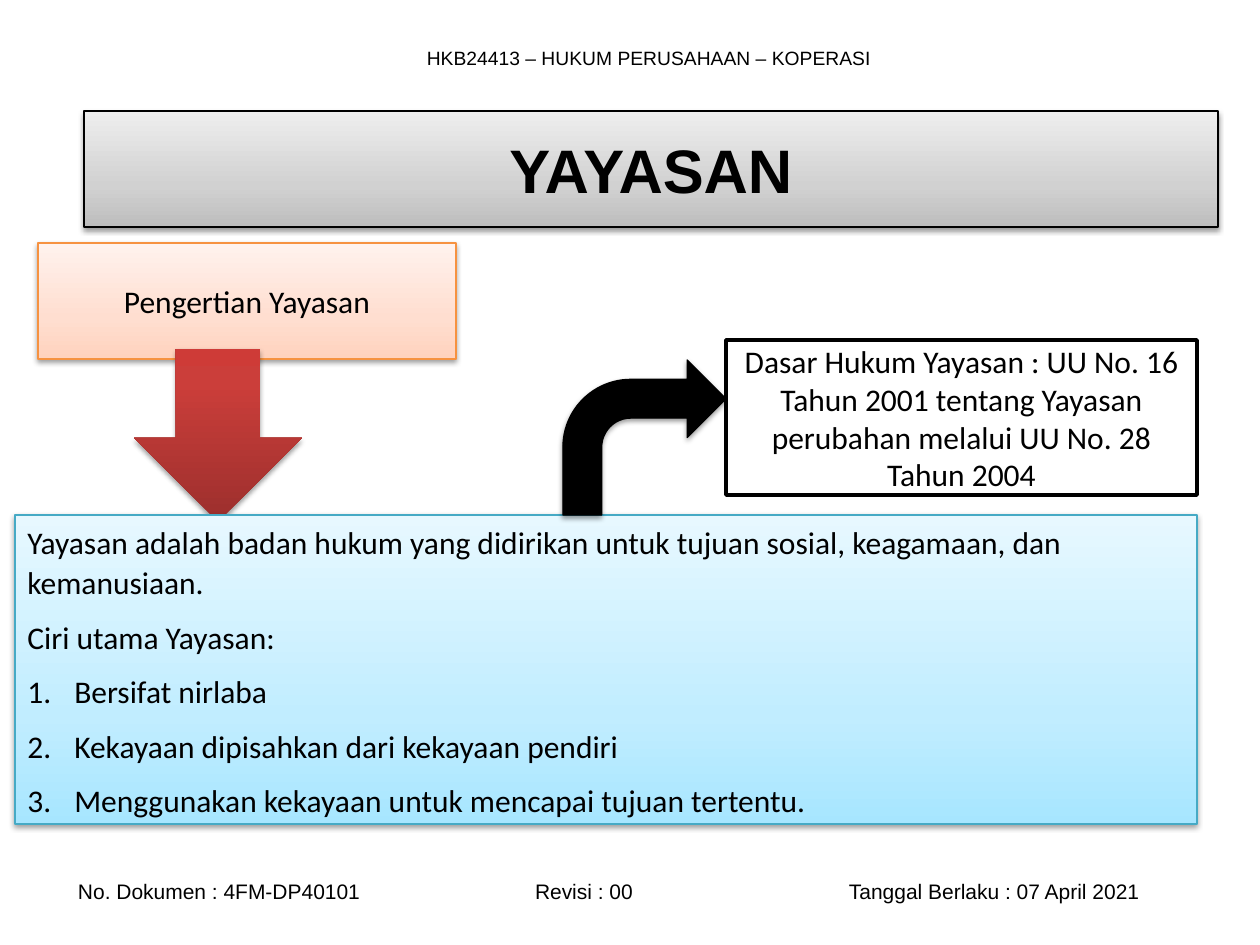
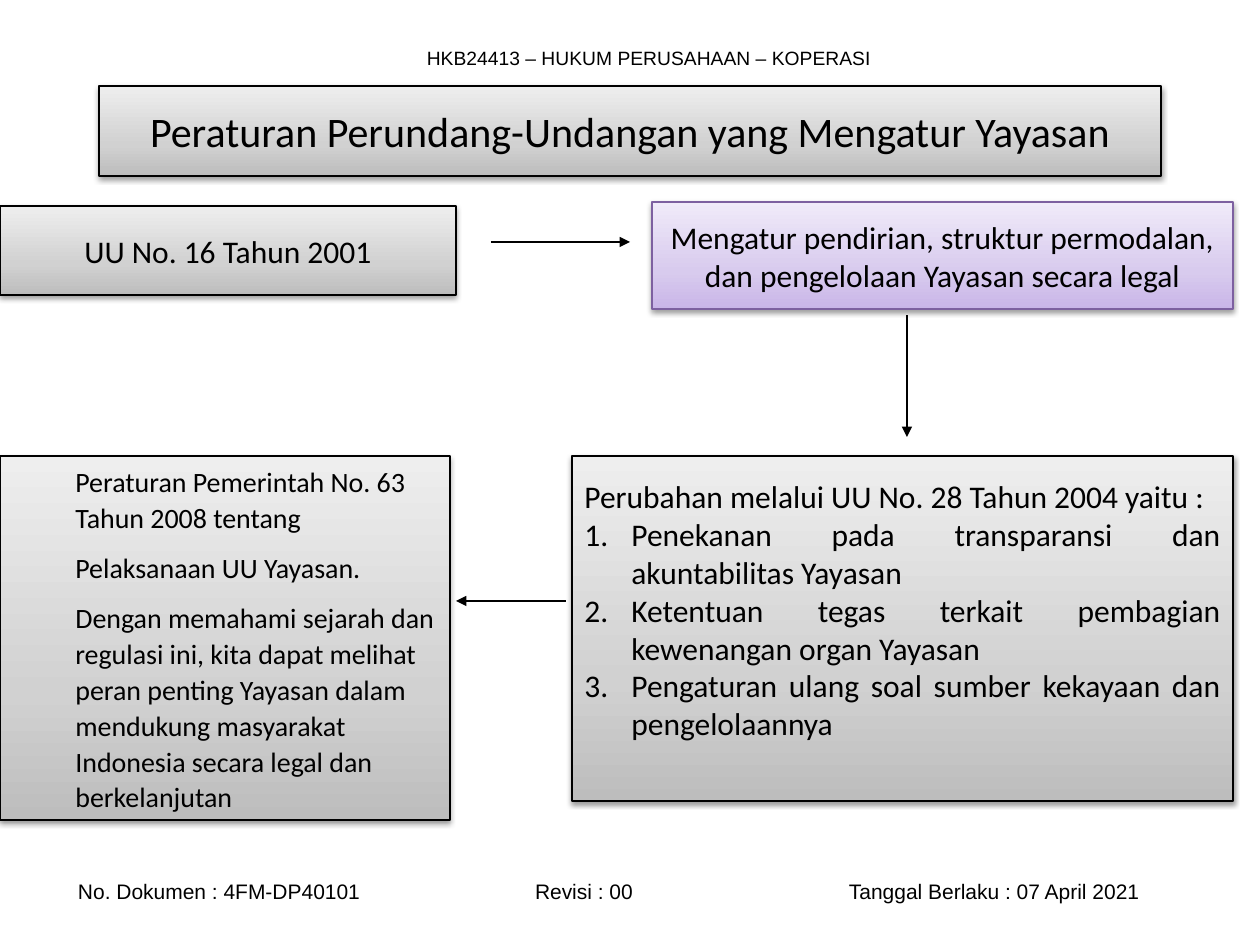
"""Build two slides on the foundation (Yayasan) and the rules that govern it."""
import copy

import lxml.etree
import pptx
import pptx.dml.color
import pptx.enum.shapes
import pptx.enum.text
import pptx.oxml.ns
import pptx.util

RGB = pptx.dml.color.RGBColor
SHAPE = pptx.enum.shapes.MSO_SHAPE
ALIGN = pptx.enum.text.PP_ALIGN
MIDDLE = pptx.enum.text.MSO_ANCHOR.MIDDLE
qn = pptx.oxml.ns.qn

BLACK = RGB(0x00, 0x00, 0x00)
WHITE = RGB(0xFF, 0xFF, 0xFF)
ORANGE = RGB(0xF6, 0x92, 0x40)
TEAL = RGB(0x46, 0xAA, 0xC5)
PURPLE = RGB(0x7D, 0x60, 0xA0)


def fade(middle, *colours):
    return list(zip((0, middle, 1), colours))


GREY_FADE = fade(0.35, RGB(0xBD, 0xBD, 0xBD), RGB(0xD1, 0xD1, 0xD1), RGB(0xEE, 0xEE, 0xEE))
PEACH_FADE = fade(0.35, RGB(0xFF, 0xD2, 0xBD), RGB(0xFF, 0xDE, 0xD0), RGB(0xFF, 0xF2, 0xED))
SKY_FADE = fade(0.35, RGB(0xA7, 0xE6, 0xFF), RGB(0xC1, 0xED, 0xFF), RGB(0xE7, 0xF8, 0xFF))
LILAC_FADE = fade(0.35, RGB(0xC9, 0xB5, 0xE8), RGB(0xD8, 0xCB, 0xEE), RGB(0xF0, 0xEA, 0xF9))
RED_FADE = fade(0.8, RGB(0x9C, 0x2F, 0x2D), RGB(0xCB, 0x3E, 0x3A), RGB(0xCE, 0x3B, 0x37))

PX_PER_INCH = 126
SLIDE_SIZE = (1260, 945)
NUMBER_INDENT = 47
FOOTER_STOPS = (457, 771)

COURSE = "HKB24413 – HUKUM PERUSAHAAN – KOPERASI"
DOCUMENT = ["No. Dokumen : 4FM-DP40101", "Revisi : 00", "Tanggal Berlaku : 07 April 2021"]

BODY = dict(align=ALIGN.LEFT, line_spacing=1.07, space_after=8)
BOX, ARROW = "box", "arrow"

SLIDES = [
    [
        (BOX, (84, 111, 1134, 116), ["YAYASAN"],
         dict(size=35.1, font="Arial", bold=True)),
        (BOX, (38, 243, 418, 116), ["Pengertian Yayasan"],
         dict(fill=PEACH_FADE, line=ORANGE)),
        (BOX, (134, 349, 168, 173), [],
         dict(kind=SHAPE.DOWN_ARROW, fill=RED_FADE, line=None)),
        (BOX, (15, 515, 1182, 309),
         ["Yayasan adalah badan hukum yang didirikan untuk tujuan sosial, keagamaan, dan kemanusiaan.",
          "Ciri utama Yayasan:",
          "Bersifat nirlaba",
          "Kekayaan dipisahkan dari kekayaan pendiri",
          "Menggunakan kekayaan untuk mencapai tujuan tertentu."],
         dict(BODY, fill=SKY_FADE, line=TEAL, numbered_from=2)),
        (BOX, (563, 360, 163, 155), [],
         dict(kind=SHAPE.BENT_ARROW, fill=BLACK)),
        (BOX, (726, 340, 471, 155),
         ["Dasar Hukum Yayasan : UU No. 16 Tahun 2001 tentang Yayasan "
          "perubahan melalui UU No. 28 Tahun 2004"],
         dict(fill=WHITE, line_width=2, shadow=False)),
    ],
    [
        (BOX, (99, 86, 1062, 90), ["Peraturan Perundang-Undangan yang Mengatur Yayasan"],
         dict(size=24)),
        (BOX, (0, 206, 456, 89), ["UU No. 16 Tahun 2001"], {}),
        (ARROW, (491, 242, 630, 242)),
        (BOX, (652, 202, 581, 107),
         ["Mengatur pendirian, struktur permodalan, dan pengelolaan Yayasan secara legal"],
         dict(fill=LILAC_FADE, line=PURPLE)),
        (ARROW, (907, 315, 907, 437)),
        (BOX, (572, 456, 661, 345),
         ["Perubahan melalui UU No. 28 Tahun 2004 yaitu :",
          "Penekanan pada transparansi dan akuntabilitas Yayasan",
          "Ketentuan tegas terkait pembagian kewenangan organ Yayasan",
          "Pengaturan ulang soal sumber kekayaan dan pengelolaannya"],
         dict(align=ALIGN.JUSTIFY, numbered_from=1, bottom=44)),
        (ARROW, (566, 601, 456, 601)),
        (BOX, (0, 456, 450, 364),
         ["Peraturan Pemerintah No. 63 Tahun 2008 tentang",
          "Pelaksanaan UU Yayasan.",
          "Dengan memahami sejarah dan regulasi ini, kita dapat melihat peran penting "
          "Yayasan dalam mendukung masyarakat Indonesia secara legal dan berkelanjutan"],
         dict(BODY, size=16, indent=63)),
    ],
]


def px(length):
    return pptx.util.Emu(round(length * pptx.util.Inches(1) / PX_PER_INCH))


def add_xml(parent, tag, **attributes):
    values = {name: str(value) for name, value in attributes.items()}
    return lxml.etree.SubElement(parent, qn(tag), values)


def paint(shape, fill):
    if not isinstance(fill, list):
        shape.fill.solid()
        shape.fill.fore_color.rgb = fill
        return
    shape.fill.gradient()
    shape.fill.gradient_angle = 90
    stop_list = shape._element.spPr.find(".//" + qn("a:gsLst"))
    stop_list.append(copy.deepcopy(stop_list[0]))
    for stop, (position, colour) in zip(shape.fill.gradient_stops, fill):
        stop.position = position
        stop.color.rgb = colour


def cast_shadow(shape):
    effects = shape._element.spPr.find(qn("a:effectLst"))
    outer = add_xml(effects, "a:outerShdw", blurRad=pptx.util.Pt(3.1), dist=pptx.util.Pt(1.6),
                    dir=5400000, rotWithShape=0)
    add_xml(add_xml(outer, "a:srgbClr", val="000000"), "a:alpha", val=38000)


def write(frame, lines, size=18, font="Calibri", bold=False, align=ALIGN.CENTER,
          line_spacing=None, space_after=None, numbered_from=None, indent=0, bottom=None,
          stops=()):
    frame.word_wrap = True
    frame.vertical_anchor = MIDDLE
    if bottom is not None:
        frame.margin_bottom = px(bottom)
    for index, line in enumerate(lines):
        paragraph = frame.add_paragraph() if index else frame.paragraphs[0]
        paragraph.text = line
        properties = paragraph._p.get_or_add_pPr()
        if numbered_from is not None and index >= numbered_from:
            properties.set("marL", str(px(NUMBER_INDENT)))
            properties.set("indent", str(-px(NUMBER_INDENT)))
            add_xml(properties, "a:buAutoNum", type="arabicPeriod")
        elif indent:
            properties.set("marL", str(px(indent)))
        if stops:
            tabs = add_xml(properties, "a:tabLst")
            for stop in stops:
                add_xml(tabs, "a:tab", pos=px(stop), algn="l")
        paragraph.alignment = align
        if line_spacing:
            paragraph.line_spacing = line_spacing
        if space_after:
            paragraph.space_after = pptx.util.Pt(space_after)
        paragraph.font.size = pptx.util.Pt(size)
        paragraph.font.name = font
        paragraph.font.bold = bold
        paragraph.font.color.rgb = BLACK


def add_box(slide, place, lines, style):
    text_style = dict(style)
    kind = text_style.pop("kind", SHAPE.RECTANGLE)
    fill = text_style.pop("fill", GREY_FADE)
    line = text_style.pop("line", BLACK)
    line_width = text_style.pop("line_width", 0.75)
    shadow = text_style.pop("shadow", True)
    shape = slide.shapes.add_shape(kind, *map(px, place))
    paint(shape, fill)
    if line is None:
        shape.line.fill.background()
    else:
        shape.line.color.rgb = line
        shape.line.width = pptx.util.Pt(line_width)
    shape.shadow.inherit = False
    if shadow:
        cast_shadow(shape)
    write(shape.text_frame, lines, **text_style)


def add_arrow(slide, ends):
    arrow = slide.shapes.add_connector(pptx.enum.shapes.MSO_CONNECTOR.STRAIGHT, *map(px, ends))
    arrow.line.color.rgb = BLACK
    arrow.line.width = pptx.util.Pt(0.75)
    properties = arrow._element.spPr
    add_xml(properties.find(qn("a:ln")), "a:tailEnd", type="triangle")
    add_xml(properties, "a:effectLst")


def add_header_and_footer(slide):
    header = slide.shapes.add_textbox(*map(px, (123, 39, 1052, 37)))
    write(header.text_frame, [COURSE], size=11, font="Arial")
    footer = slide.shapes.add_textbox(*map(px, (25, 872, 1191, 38)))
    footer.text_frame.margin_left = px(53)
    write(footer.text_frame, ["\t".join(DOCUMENT)], size=12, font="Arial",
          align=ALIGN.LEFT, stops=FOOTER_STOPS)


def main():
    deck = pptx.Presentation()
    deck.slide_width, deck.slide_height = map(px, SLIDE_SIZE)
    adders = {BOX: add_box, ARROW: add_arrow}
    for parts in SLIDES:
        slide = deck.slides.add_slide(deck.slide_layouts[6])
        add_header_and_footer(slide)
        for part, *details in parts:
            adders[part](slide, *details)
    deck.save("out.pptx")


if __name__ == "__main__":
    main()
